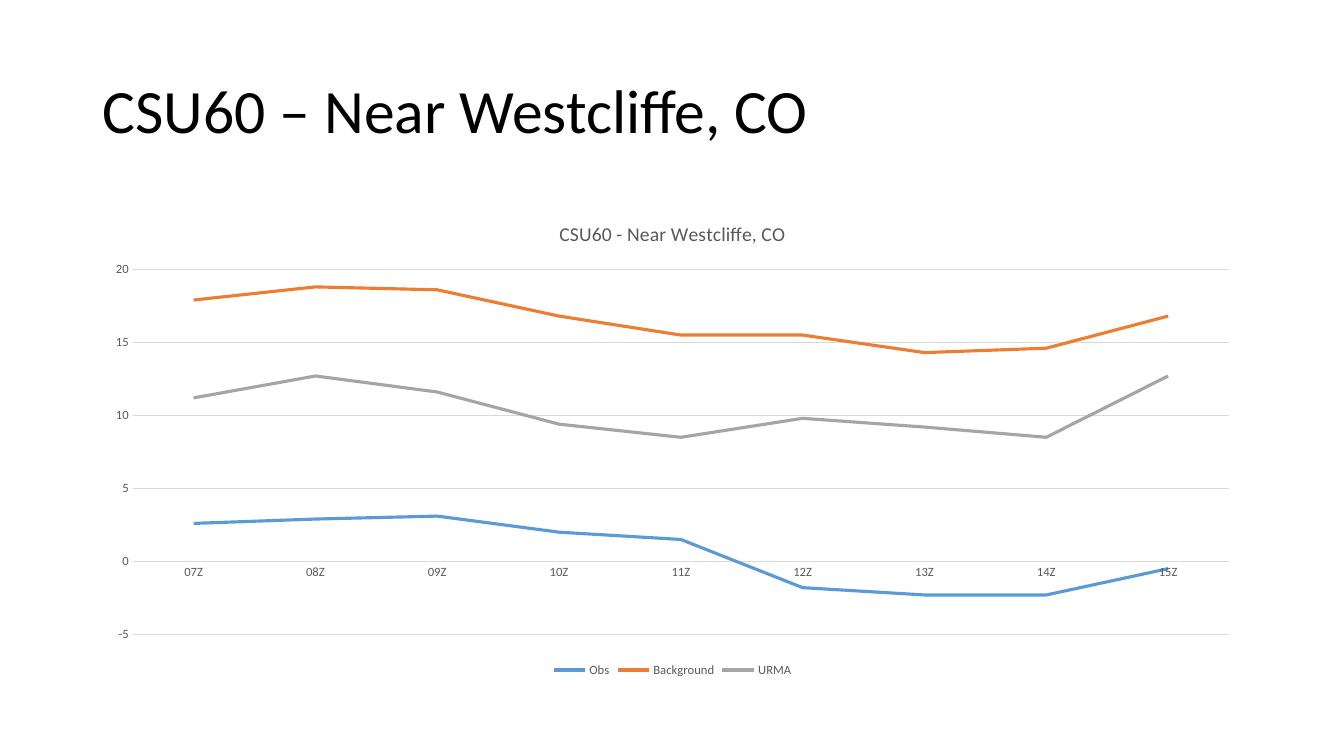
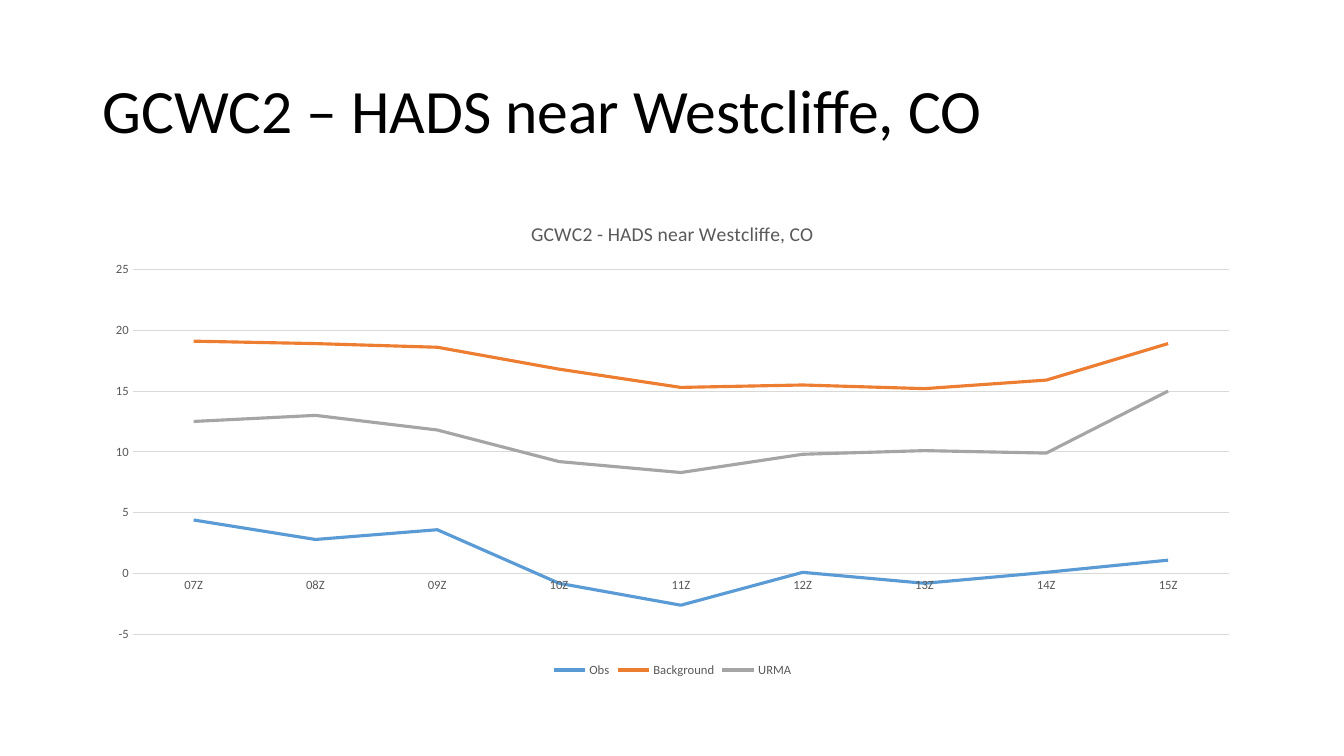
import pptx
import pptx.chart.data
import pptx.dml.color
import pptx.enum.chart
import pptx.enum.text
import pptx.util

Inches = pptx.util.Inches
Pt = pptx.util.Pt

FONT = "Calibri"
BLACK, GRAY, GRID = "000000", "595959", "D9D9D9"
TITLE_BOX = (0.92, 0.4, 11.5, 1.45)
CHART_BOX = (0.92, 2, 11.5, 4.76)
HOURS = [f"{hour:02d}Z" for hour in range(7, 16)]
SERIES_COLORS = {"Obs": "5B9BD5", "Background": "ED7D31", "URMA": "A5A5A5"}

STATIONS = [
    {
        "title": "CSU60 – Near Westcliffe, CO",
        "chart_title": "CSU60 - Near Westcliffe, CO",
        "maximum": 20,
        "values": {
            "Obs": [2.6, 2.9, 3.1, 2, 1.5, -1.8, -2.3, -2.3, -0.5],
            "Background": [17.9, 18.8, 18.6, 16.8, 15.5, 15.5, 14.3, 14.6, 16.8],
            "URMA": [11.2, 12.7, 11.6, 9.4, 8.5, 9.8, 9.2, 8.5, 12.7],
        },
    },
    {
        "title": "GCWC2 – HADS near Westcliffe, CO",
        "chart_title": "GCWC2 - HADS near Westcliffe, CO",
        "maximum": 25,
        "values": {
            "Obs": [4.4, 2.8, 3.6, -0.8, -2.6, 0.1, -0.8, 0.1, 1.1],
            "Background": [19.1, 18.9, 18.6, 16.8, 15.3, 15.5, 15.2, 15.9, 18.9],
            "URMA": [12.5, 13, 11.8, 9.2, 8.3, 9.8, 10.1, 9.9, 15],
        },
    },
]


def rgb(color):
    """Turn a hex string into a colour."""
    return pptx.dml.color.RGBColor.from_string(color)


def set_attributes(target, values):
    """Set each named attribute of the target."""
    for name, value in values.items():
        setattr(target, name, value)


def format_font(font, size, color):
    """Apply the deck's font in a size and colour."""
    set_attributes(font, {"name": FONT, "size": Pt(size), "bold": False})
    font.color.rgb = rgb(color)


def format_line(line, color, width):
    """Give a line a colour and a width in points."""
    line.color.rgb = rgb(color)
    line.width = Pt(width)


def place_title(slide, box, text):
    """Place the slide title in the box."""
    title = slide.shapes.title
    names = ("left", "top", "width", "height")
    set_attributes(title, dict(zip(names, map(Inches, box))))
    frame = title.text_frame
    frame.text = text
    set_attributes(frame, {
        "word_wrap": True,
        "auto_size": pptx.enum.text.MSO_AUTO_SIZE.NONE,
        "vertical_anchor": pptx.enum.text.MSO_ANCHOR.MIDDLE,
    })
    paragraph = frame.paragraphs[0]
    set_attributes(paragraph, {
        "alignment": pptx.enum.text.PP_ALIGN.LEFT,
        "line_spacing": 0.9,
    })
    format_font(paragraph.runs[0].font, 44, BLACK)


def format_axes(chart, maximum):
    """Style both axes and set the value scale."""
    for axis in (chart.category_axis, chart.value_axis):
        axis.major_tick_mark = pptx.enum.chart.XL_TICK_MARK.NONE
        axis.minor_tick_mark = pptx.enum.chart.XL_TICK_MARK.NONE
        format_font(axis.tick_labels.font, 9, GRAY)
    format_line(chart.category_axis.format.line, GRID, 0.75)
    value_axis = chart.value_axis
    set_attributes(value_axis, {
        "minimum_scale": -5,
        "maximum_scale": maximum,
        "major_unit": 5,
        "has_major_gridlines": True,
    })
    value_axis.format.line.fill.background()
    format_line(value_axis.major_gridlines.format.line, GRID, 0.75)


def place_chart(slide, box, station):
    """Place the station's line chart in the box."""
    data = pptx.chart.data.CategoryChartData(number_format="General")
    data.categories = HOURS
    for name, values in station["values"].items():
        data.add_series(name, values)
    chart = slide.shapes.add_chart(
        pptx.enum.chart.XL_CHART_TYPE.LINE, *map(Inches, box), data
    ).chart
    format_font(chart.font, 10, BLACK)
    set_attributes(chart, {"has_title": True, "has_legend": True})
    chart.plots[0].vary_by_categories = False

    frame = chart.chart_title.text_frame
    frame.text = station["chart_title"]
    format_font(frame.paragraphs[0].runs[0].font, 14, GRAY)
    chart.chart_title.include_in_layout = False

    set_attributes(chart.legend, {
        "position": pptx.enum.chart.XL_LEGEND_POSITION.BOTTOM,
        "include_in_layout": False,
    })
    format_font(chart.legend.font, 9, GRAY)
    format_axes(chart, station["maximum"])

    for series in chart.series:
        series.smooth = False
        series.marker.style = pptx.enum.chart.XL_MARKER_STYLE.NONE
        format_line(series.format.line, SERIES_COLORS[series.name], 2.25)


def add_station_slide(presentation, station):
    """Add a slide with a station's title and chart."""
    slide = presentation.slides.add_slide(presentation.slide_layouts[5])
    place_title(slide, TITLE_BOX, station["title"])
    place_chart(slide, CHART_BOX, station)


def main():
    """Build and save the presentation."""
    presentation = pptx.Presentation()
    set_attributes(presentation, {
        "slide_width": Inches(13.33),
        "slide_height": Inches(7.5),
    })
    for station in STATIONS:
        add_station_slide(presentation, station)
    presentation.save("out.pptx")


if __name__ == "__main__":
    main()
